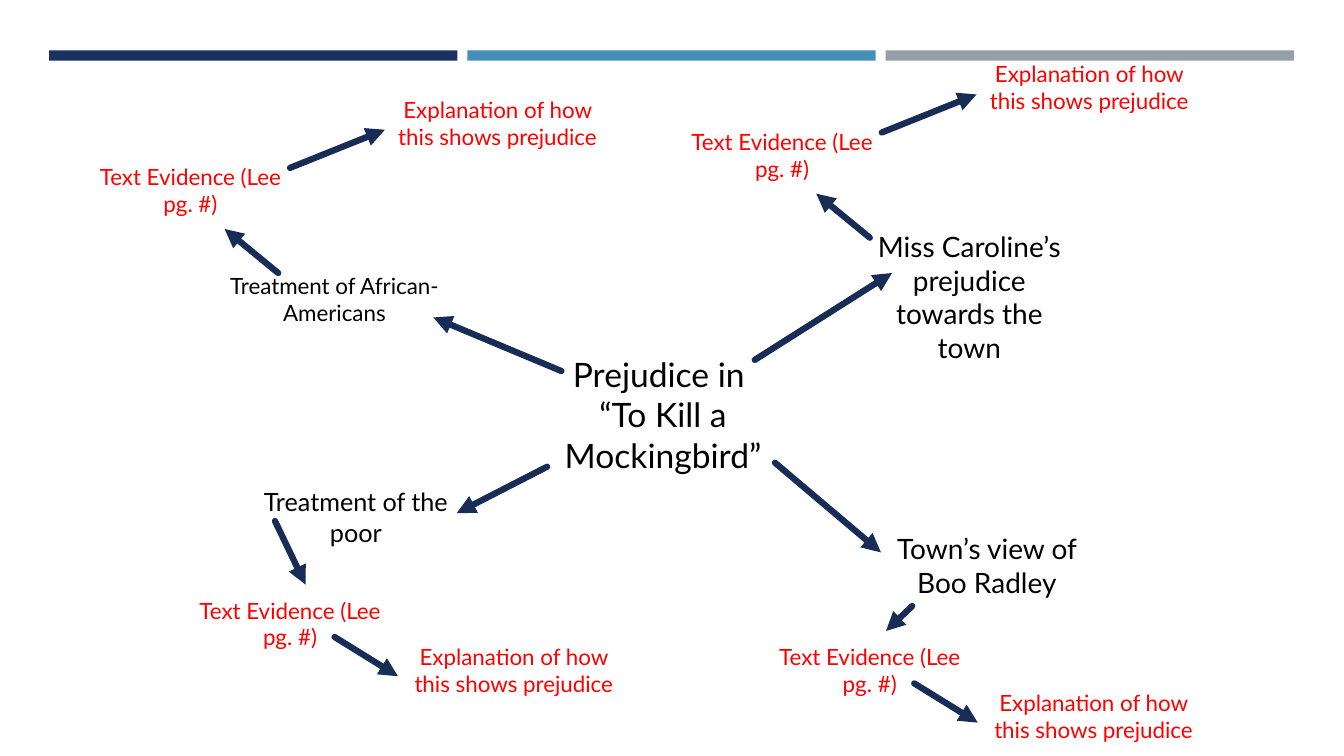
from dataclasses import dataclass

from lxml import etree
from pptx import Presentation
from pptx.dml.color import RGBColor
from pptx.enum.shapes import MSO_CONNECTOR, MSO_SHAPE
from pptx.enum.text import MSO_AUTO_SIZE, PP_ALIGN
from pptx.oxml.ns import qn
from pptx.util import Cm, Pt

STRAIGHT = MSO_CONNECTOR.STRAIGHT
RECTANGLE = MSO_SHAPE.RECTANGLE
CENTER = PP_ALIGN.CENTER
GROW_TO_FIT = MSO_AUTO_SIZE.SHAPE_TO_FIT_TEXT

NAVY = RGBColor(0x1A, 0x32, 0x60)
BLUE = RGBColor(0x45, 0x90, 0xB8)
GRAY = RGBColor(0x96, 0x9F, 0xA7)
ARROW_NAVY = RGBColor(0x17, 0x2D, 0x56)
BLACK = RGBColor(0x00, 0x00, 0x00)
RED = RGBColor(0xFF, 0x00, 0x00)

FONT = "Lato"
LABEL_WIDTH = 5.84
DETAIL_HEIGHT = 1.63


@dataclass
class EvidenceLayout:
    arrow_start: tuple
    arrow_end: tuple
    explanation: tuple


@dataclass
class Branch:
    text: str
    size: int
    box: tuple
    center_arrow: tuple
    evidence_arrow: tuple
    evidence: tuple
    layout: EvidenceLayout


RISING = EvidenceLayout((5.43, 0.24), (7.82, -0.72), (7.74, -1.7))
FALLING = EvidenceLayout((4.04, 1.14), (5.64, 2.13), (5.64, 1.17))

CENTER_BOX = (13.79, 8.79, 3.33)
BRANCHES = [
    Branch("Treatment of African-Americans", 16, (5.51, 6.73, 1.63),
           ((0.36, 0.56), (-2.87, -0.79)), ((1.5, 0.15), (0.15, -0.96)),
           (-3.63, -2.74), RISING),
    Branch("Treatment of the poor", 18, (6.05, 12.14, 1.8),
           ((0, 2.97), (-2.28, 4.14)), ((0.88, 0.99), (1.65, 2.59)),
           (-1.66, 2.77), FALLING),
    Branch("Miss Caroline’s prejudice towards the town", 20, (21.51, 5.66, 3.68),
           ((5.23, 0.28), (8.69, -1.91)), ((0.41, 0.33), (-0.94, -0.78)),
           (-4.72, -2.56), RISING),
    Branch("Town’s view of Boo Radley", 20, (21.95, 13.28, 1.96),
           ((5.74, 2.87), (8.41, 5.13)), ((1.04, 1.99), (0.38, 2.62)),
           (-2.95, 2.8), FALLING),
]


def add_label(slide, text, left, top, height, size=16, color=BLACK):
    shape = slide.shapes.add_textbox(Cm(left), Cm(top), Cm(LABEL_WIDTH), Cm(height))
    frame = shape.text_frame
    frame.word_wrap = True
    frame.auto_size = GROW_TO_FIT
    frame.text = text
    for paragraph in frame.paragraphs:
        paragraph.alignment = CENTER
        font = paragraph.runs[0].font
        font.name = FONT
        font.size = Pt(size)
        font.color.rgb = color


def add_arrow(slide, left, top, start, end):
    connector = slide.shapes.add_connector(
        STRAIGHT,
        Cm(left + start[0]), Cm(top + start[1]),
        Cm(left + end[0]), Cm(top + end[1]),
    )
    connector.line.color.rgb = ARROW_NAVY
    connector.line.width = Pt(4.5)
    properties = connector._element.spPr
    line = properties.find(qn("a:ln"))
    line.set("cap", "rnd")
    etree.SubElement(line, qn("a:tailEnd"), type="triangle")
    etree.SubElement(properties, qn("a:effectLst"))


def add_header_bars(slide, left, top, width, height, gap):
    for index, color in enumerate((NAVY, BLUE, GRAY)):
        bar_left = left + index * (width + gap)
        shape = slide.shapes.add_shape(
            RECTANGLE, Cm(bar_left), Cm(top), Cm(width), Cm(height))
        shape.shadow.inherit = False
        shape.fill.solid()
        shape.fill.fore_color.rgb = color
        shape.line.fill.background()


def add_evidence(slide, left, top, layout):
    add_label(slide, "Text Evidence (Lee pg. #)", left, top, DETAIL_HEIGHT, color=RED)
    add_arrow(slide, left, top, layout.arrow_start, layout.arrow_end)
    across, down = layout.explanation
    add_label(slide, "Explanation of how this shows prejudice",
              left + across, top + down, DETAIL_HEIGHT, color=RED)


def add_branch(slide, branch):
    left, top, height = branch.box
    add_label(slide, branch.text, left, top, height, size=branch.size)
    add_arrow(slide, left, top, *branch.evidence_arrow)
    across, down = branch.evidence
    add_evidence(slide, left + across, top + down, branch.layout)


def add_mind_map(slide, left, top, height):
    add_label(slide, "Prejudice in \n“To Kill a Mockingbird”", left, top, height, size=24)
    for branch in BRANCHES:
        add_arrow(slide, left, top, *branch.center_arrow)
        add_branch(slide, branch)


def main():
    presentation = Presentation()
    presentation.slide_width = Cm(33.87)
    presentation.slide_height = Cm(19.05)
    slide = presentation.slides.add_slide(presentation.slide_layouts[6])
    add_header_bars(slide, left=1.24, top=1.27, width=10.29, height=0.26, gap=0.25)
    add_mind_map(slide, *CENTER_BOX)
    presentation.save("out.pptx")


if __name__ == "__main__":
    main()
